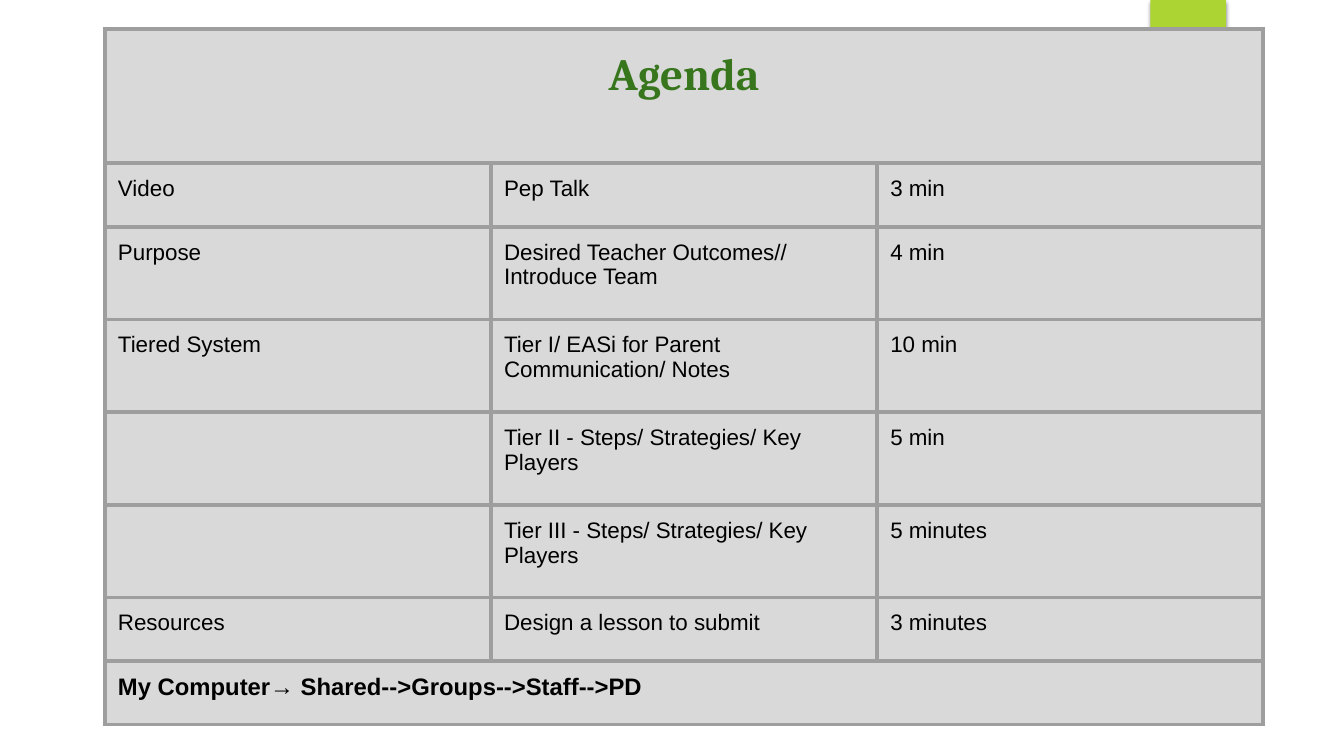
from dataclasses import dataclass

from lxml import etree
from pptx import Presentation
from pptx import util as u
from pptx.dml.color import RGBColor
from pptx.enum import shapes, text
from pptx.oxml import ns

GREEN = RGBColor(0x38, 0x76, 0x1D)
LIME = RGBColor(0xAC, 0xD4, 0x33)
GREY = RGBColor(0xD9, 0xD9, 0xD9)
EDGE = RGBColor(0x9E, 0x9E, 0x9E)
BLACK = RGBColor(0, 0, 0)


@dataclass(frozen=True)
class Style:
    font: str = "Arial"
    size: int = 16
    color: RGBColor = BLACK
    bold: bool = False


@dataclass(frozen=True)
class Row:
    height: float
    words: tuple[str, ...]
    style: Style = Style()


ROWS = (
    Row(1.33, ("Agenda",), Style("Cambria", 32, GREEN, True)),
    Row(0.63, ("Video", "Pep Talk", "3 min")),
    Row(0.92, ("Purpose", "Desired Teacher Outcomes// Introduce Team", "4 min")),
    Row(0.92, ("Tiered System", "Tier I/ EASi for Parent Communication/ Notes", "10 min")),
    Row(0.92, ("", "Tier II - Steps/ Strategies/ Key Players", "5 min")),
    Row(0.92, ("", "Tier III - Steps/ Strategies/ Key Players", "5 minutes")),
    Row(0.63, ("Resources", "Design a lesson to submit", "3 minutes")),
    Row(0.63, ("My Computer→ Shared-->Groups-->Staff-->PD",), Style(size=17, bold=True)),
)
COLS = 3
WIDTH = 3.83


def add_tab(slide) -> None:
    tab = slide.shapes.add_shape(
        shapes.MSO_SHAPE.RECTANGLE, u.Inches(11.41), 0, u.Inches(0.75), u.Inches(1.25))
    tab.shadow.inherit = False
    tab.fill.solid()
    tab.fill.fore_color.rgb = LIME
    tab.line.fill.background()
    glow = tab._element.spPr.find(ns.qn("a:effectLst"))
    shade = etree.SubElement(glow, ns.qn("a:outerShdw"), blurRad=str(u.Pt(3)),
                             dist=str(u.Pt(2)), dir="5400000", rotWithShape="0")
    tint = etree.SubElement(shade, ns.qn("a:srgbClr"), val=str(BLACK))
    etree.SubElement(tint, ns.qn("a:alpha"), val="45000")


def paint(cell) -> None:
    cell.fill.solid()
    cell.fill.fore_color.rgb = GREY
    cell.margin_left = cell.margin_right = u.Inches(0.13)
    cell.margin_top = cell.margin_bottom = u.Inches(0.13)
    props = cell._tc.get_or_add_tcPr()
    for spot, side in enumerate("LRTB"):
        line = etree.Element(ns.qn(f"a:ln{side}"), w=str(u.Pt(3)))
        fill = etree.SubElement(line, ns.qn("a:solidFill"))
        etree.SubElement(fill, ns.qn("a:srgbClr"), val=str(EDGE))
        props.insert(spot, line)


def write(cell, words: str, style: Style) -> None:
    cell.text_frame.text = words
    for run in cell.text_frame.paragraphs[0].runs:
        run.font.name = style.font
        run.font.size = u.Pt(style.size)
        run.font.bold = style.bold
        run.font.color.rgb = style.color


def add_plan(slide) -> None:
    frame = slide.shapes.add_table(
        len(ROWS), COLS, u.Inches(1.04), u.Inches(0.29), u.Inches(WIDTH * COLS),
        u.Inches(sum(row.height for row in ROWS)))
    table = frame.table
    table.first_row = table.horz_banding = False
    for col in table.columns:
        col.width = u.Inches(WIDTH)
    for i, row in enumerate(ROWS):
        table.rows[i].height = u.Inches(row.height)
        for cell in table.rows[i].cells:
            paint(cell)
        if len(row.words) == 1:
            table.cell(i, 0).merge(table.cell(i, COLS - 1))
        for j, words in enumerate(row.words):
            if words:
                write(table.cell(i, j), words, row.style)
    head = table.cell(0, 0).text_frame.paragraphs[0]
    head.alignment = text.PP_ALIGN.CENTER
    head.line_spacing = 1.15
    head.space_after = u.Pt(21)


def main() -> None:
    deck = Presentation()
    deck.slide_width = u.Inches(13.33)
    deck.slide_height = u.Inches(7.5)
    slide = deck.slides.add_slide(deck.slide_layouts[6])
    add_tab(slide)
    add_plan(slide)
    deck.save("out.pptx")


if __name__ == "__main__":
    main()
